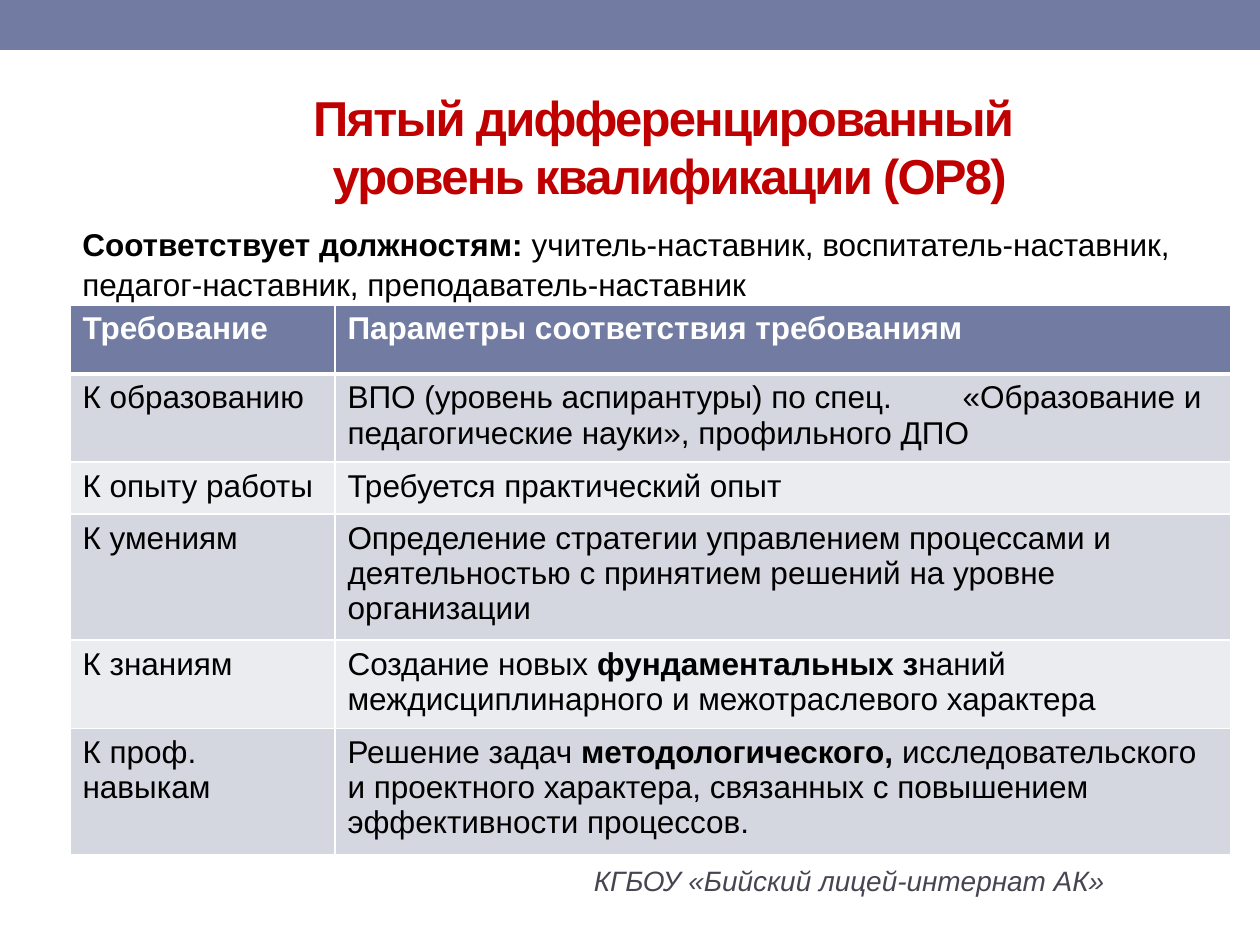
import pptx
import pptx.util
import pptx.dml.color
import pptx.enum.shapes
import pptx.enum.text
import pptx.oxml
import pptx.oxml.ns

SCALE = 914400 // 126
FONT = "Arial"
BLUE, DARK, LIGHT, WHITE, BLACK = "727CA3", "D5D7E0", "EBECF0", "FFFFFF", "000000"
ALIGN = pptx.enum.text.PP_ALIGN
ANCHOR = pptx.enum.text.MSO_ANCHOR

TITLE = [("Пятый дифференцированный \vуровень квалификации (ОР8)", True)]
POSTS = [
    ("Соответствует должностям: ", True),
    ("учитель-наставник, воспитатель-наставник, педагог-наставник, "
     "преподаватель-наставник", False),
]
FOOTER = [("КГБОУ «Бийский лицей-интернат АК»", False)]
ROWS = [
    (69, "Требование", [("Параметры соответствия требованиям", True)]),
    (88, "К образованию", [("ВПО (уровень аспирантуры) по спец.\t«Образование и "
                            "педагогические науки», профильного ДПО", False)]),
    (52, "К опыту работы", [("Требуется практический опыт", False)]),
    (118, "К умениям", [("Определение стратегии управлением процессами и деятельностью "
                         "с принятием решений на уровне организации", False)]),
    (83, "К знаниям", [("Создание новых ", False), ("фундаментальных з", True),
                       ("наний междисциплинарного и межотраслевого характера", False)]),
    (118, "К проф. навыкам", [("Решение задач ", False), ("методологического, ", True),
                              ("исследовательского и проектного характера, связанных "
                               "с повышением эффективности процессов.", False)]),
]
COLS = (265, 896)
TAB = 615


def px(n):
    return pptx.util.Emu(n * SCALE)


def rgb(value):
    return pptx.dml.color.RGBColor.from_string(value)


def write(p, runs, size, color, spc=None, **fmt):
    for text, bold in runs:
        for i, line in enumerate(text.split("\v")):
            if i:
                p.add_line_break()
            r = p.add_run()
            r.text = line
            values = dict(name=FONT, size=pptx.util.Pt(size), bold=bold, **fmt)
            for key, value in values.items():
                setattr(r.font, key, value)
            r.font.color.rgb = rgb(color)
            if spc:
                r.font._element.set("spc", str(spc))


def add_text(s, box, runs, size, color, align=ALIGN.LEFT, anchor=ANCHOR.TOP,
             line=1.0, **fmt):
    tf = s.shapes.add_textbox(*map(px, box)).text_frame
    tf.word_wrap = True
    tf.vertical_anchor = anchor
    p = tf.paragraphs[0]
    p.alignment = align
    p.line_spacing = line
    write(p, runs, size, color, **fmt)


def set_borders(cell, widths):
    tcPr = cell._tc.get_or_add_tcPr()
    for i, (side, width) in enumerate(widths.items()):
        tcPr.insert(i, pptx.oxml.parse_xml(
            f'<a:{side} {pptx.oxml.ns.nsdecls("a")} w="{pptx.util.Pt(width)}">'
            f'<a:solidFill><a:srgbClr val="{WHITE}"/></a:solidFill></a:{side}>'))


def add_tab(p, position):
    p._p.get_or_add_pPr().append(pptx.oxml.parse_xml(
        f'<a:tabLst {pptx.oxml.ns.nsdecls("a")}>'
        f'<a:tab pos="{px(position)}" algn="l"/></a:tabLst>'))


def add_requirements(s):
    heights = [row[0] for row in ROWS]
    table = s.shapes.add_table(len(ROWS), len(COLS), px(70), px(305),
                               px(sum(COLS)), px(sum(heights))).table
    for col, width in zip(table.columns, COLS):
        col.width = px(width)
    for i, (height, name, runs) in enumerate(ROWS):
        table.rows[i].height = px(height)
        header = i == 0
        fill = BLUE if header else DARK if i % 2 else LIGHT
        for j, content in enumerate(([(name, header)], runs)):
            cell = table.cell(i, j)
            cell.fill.solid()
            cell.fill.fore_color.rgb = rgb(fill)
            set_borders(cell, dict(lnL=1, lnR=1, lnT=3 if i == 1 else 1,
                                   lnB=3 if header else 1))
            p = cell.text_frame.paragraphs[0]
            if any("\t" in text for text, _ in content):
                add_tab(p, TAB)
            write(p, content, 18, WHITE if header else BLACK)


def main():
    """Build the slide on the fifth qualification level."""
    prs = pptx.Presentation()
    prs.slide_width, prs.slide_height = px(1260), px(945)
    s = prs.slides.add_slide(prs.slide_layouts[6])
    band = s.shapes.add_shape(pptx.enum.shapes.MSO_SHAPE.RECTANGLE,
                              0, 0, px(1260), px(50))
    band.shadow.inherit = False
    band.fill.solid()
    band.fill.fore_color.rgb = rgb(BLUE)
    band.line.fill.background()
    add_text(s, (493, 857, 624, 47), FOOTER, 16, "464653", ALIGN.RIGHT, italic=True)
    add_text(s, (118, 78, 1103, 136), TITLE, 28, "C00000", ALIGN.CENTER,
             ANCHOR.MIDDLE, spc=-100)
    add_requirements(s)
    add_text(s, (70, 217, 1190, 89), POSTS, 18, BLACK, line=1.05)
    prs.save("out.pptx")


if __name__ == "__main__":
    main()
